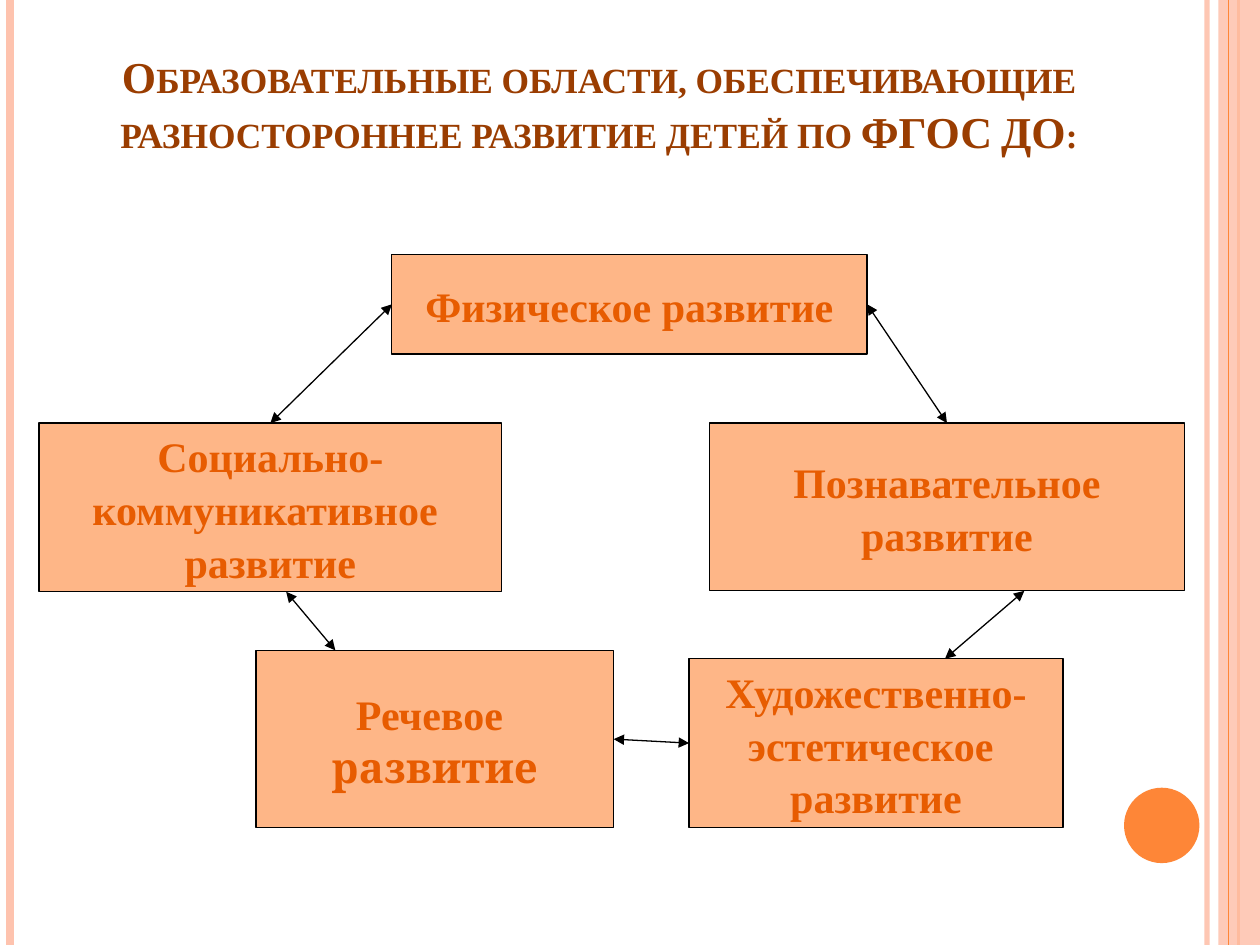
from dataclasses import dataclass
from typing import Optional

from lxml import etree
from pptx import Presentation
from pptx import util as u
from pptx.dml.color import RGBColor
from pptx.enum import shapes, text
from pptx.oxml.ns import qn

COLORS = {
    "rail": "FEC3AE",
    "accent": "FE8637",
    "title": "9A3D01",
    "box": "FEB687",
    "label": "E75C01",
    "outline": "000000",
}
SERIF = "Times New Roman"
WIDTH, HEIGHT = 25.4, 19.05
TOP, LEFT, BOTTOM, RIGHT = range(4)


@dataclass
class Rail:
    x: float
    color: str
    weight: float
    opacity: Optional[int] = None


@dataclass
class Area:
    name: str
    lines: list[str]
    left: float
    top: float
    width: float
    height: float
    last_font: str = SERIF


@dataclass
class Link:
    start: tuple[float, float]
    end: tuple[float, float]


@dataclass
class Joint:
    source: str
    source_side: int
    target: str
    target_side: int


BACK_RAIL = Rail(24.33, "rail", 3, 93)
RAILS = [BACK_RAIL, Rail(0.2, "rail", 4.5), Rail(24.97, "accent", 1.5)]
FRONT_RAIL = Rail(24.77, "accent", 0.75)

AREAS = [
    Area("physical", ["Физическое развитие"], 7.9, 5.13, 9.58, 2.01),
    Area("artistic", ["Художественно-", "эстетическое ", "развитие"], 13.89, 13.28, 7.54, 3.4),
    Area("cognitive", [" Познавательное ", "развитие"], 14.3, 8.53, 9.58, 3.38),
    Area("speech", ["Речевое ", "развитие"], 5.16, 13.11, 7.21, 3.58, "Cambria"),
    Area("social", ["Социально-", "коммуникативное ", "развитие"], 0.79, 8.53, 9.32, 3.4),
]
JOINTS = [
    Joint("physical", LEFT, "social", TOP),
    Joint("physical", RIGHT, "cognitive", TOP),
    Joint("speech", RIGHT, "artistic", LEFT),
]
LINKS = [
    Link((5.77, 11.93), (6.76, 13.11)),
    Link((19.05, 13.28), (20.65, 11.91)),
]


def rgb(name: str) -> RGBColor:
    return RGBColor.from_string(COLORS[name])


def set_opacity(element, percent: int) -> None:
    color = next(element.iter(qn("a:srgbClr")))
    etree.SubElement(color, qn("a:alpha")).set("val", str(percent * 1000))


def add_line(slide, start, end, color: str, weight: float):
    points = [u.Cm(value) for value in (*start, *end)]
    connector = slide.shapes.add_connector(shapes.MSO_CONNECTOR.STRAIGHT, *points)
    connector.line.color.rgb = rgb(color)
    connector.line.width = u.Pt(weight)
    etree.SubElement(connector._element.spPr, qn("a:effectLst"))
    return connector


def add_rail(slide, rail: Rail) -> None:
    connector = add_line(slide, (rail.x, 0), (rail.x, HEIGHT), rail.color, rail.weight)
    if rail.opacity is not None:
        set_opacity(connector._element.spPr, rail.opacity)


def add_arrow(slide, start=(0, 0), end=(1, 1)):
    connector = add_line(slide, start, end, "outline", 0.75)
    line = connector.line._get_or_add_ln()
    for tag in ("a:headEnd", "a:tailEnd"):
        etree.SubElement(line, qn(tag)).set("type", "triangle")
    return connector


def add_plain_shape(slide, kind, left, top, width, height, color: str):
    shape = slide.shapes.add_shape(kind, u.Cm(left), u.Cm(top), u.Cm(width), u.Cm(height))
    shape.shadow.inherit = False
    shape.fill.solid()
    shape.fill.fore_color.rgb = rgb(color)
    shape.line.fill.background()
    return shape


def style_paragraph(paragraph, size: float, color: str, font: str = SERIF) -> None:
    paragraph.alignment = text.PP_ALIGN.CENTER
    paragraph.line_spacing = 1.05
    paragraph.font.name = font
    paragraph.font.size = u.Pt(size)
    paragraph.font.bold = True
    paragraph.font.color.rgb = rgb(color)


def add_title(slide) -> None:
    box = slide.shapes.add_textbox(u.Cm(1.7), u.Cm(0.13), u.Cm(20.75), u.Cm(3.17))
    frame = box.text_frame
    frame.word_wrap = True
    frame.vertical_anchor = text.MSO_ANCHOR.BOTTOM
    paragraph = frame.paragraphs[0]
    run = paragraph.add_run()
    run.text = "Образовательные области, обеспечивающие разностороннее развитие детей по ФГОС ДО:"
    style_paragraph(paragraph, 25.2, "title")
    run._r.get_or_add_rPr().set("cap", "small")


def add_area(slide, area: Area):
    shape = add_plain_shape(slide, shapes.MSO_SHAPE.RECTANGLE, area.left, area.top,
                            area.width, area.height, "box")
    shape.line.color.rgb = rgb("outline")
    shape.line.width = u.Pt(0.75)
    frame = shape.text_frame
    frame.word_wrap = False
    frame.vertical_anchor = text.MSO_ANCHOR.MIDDLE
    frame.text = "\n".join(area.lines)
    for paragraph in frame.paragraphs:
        style_paragraph(paragraph, 24, "label")
    frame.paragraphs[-1].font.name = area.last_font
    return shape


def main() -> None:
    presentation = Presentation()
    presentation.slide_width = u.Cm(WIDTH)
    presentation.slide_height = u.Cm(HEIGHT)
    slide = presentation.slides.add_slide(presentation.slide_layouts[6])

    for rail in RAILS:
        add_rail(slide, rail)
    band = add_plain_shape(slide, shapes.MSO_SHAPE.RECTANGLE, 24.56, 0, 0.84, HEIGHT, "rail")
    set_opacity(band._element.spPr, 87)
    add_rail(slide, FRONT_RAIL)
    add_plain_shape(slide, shapes.MSO_SHAPE.OVAL, 22.66, 15.88, 1.52, 1.52, "accent")

    add_title(slide)
    boxes = {area.name: add_area(slide, area) for area in AREAS}
    for joint in JOINTS:
        arrow = add_arrow(slide)
        arrow.begin_connect(boxes[joint.source], joint.source_side)
        arrow.end_connect(boxes[joint.target], joint.target_side)
    for link in LINKS:
        add_arrow(slide, link.start, link.end)

    presentation.save("out.pptx")


if __name__ == "__main__":
    main()
